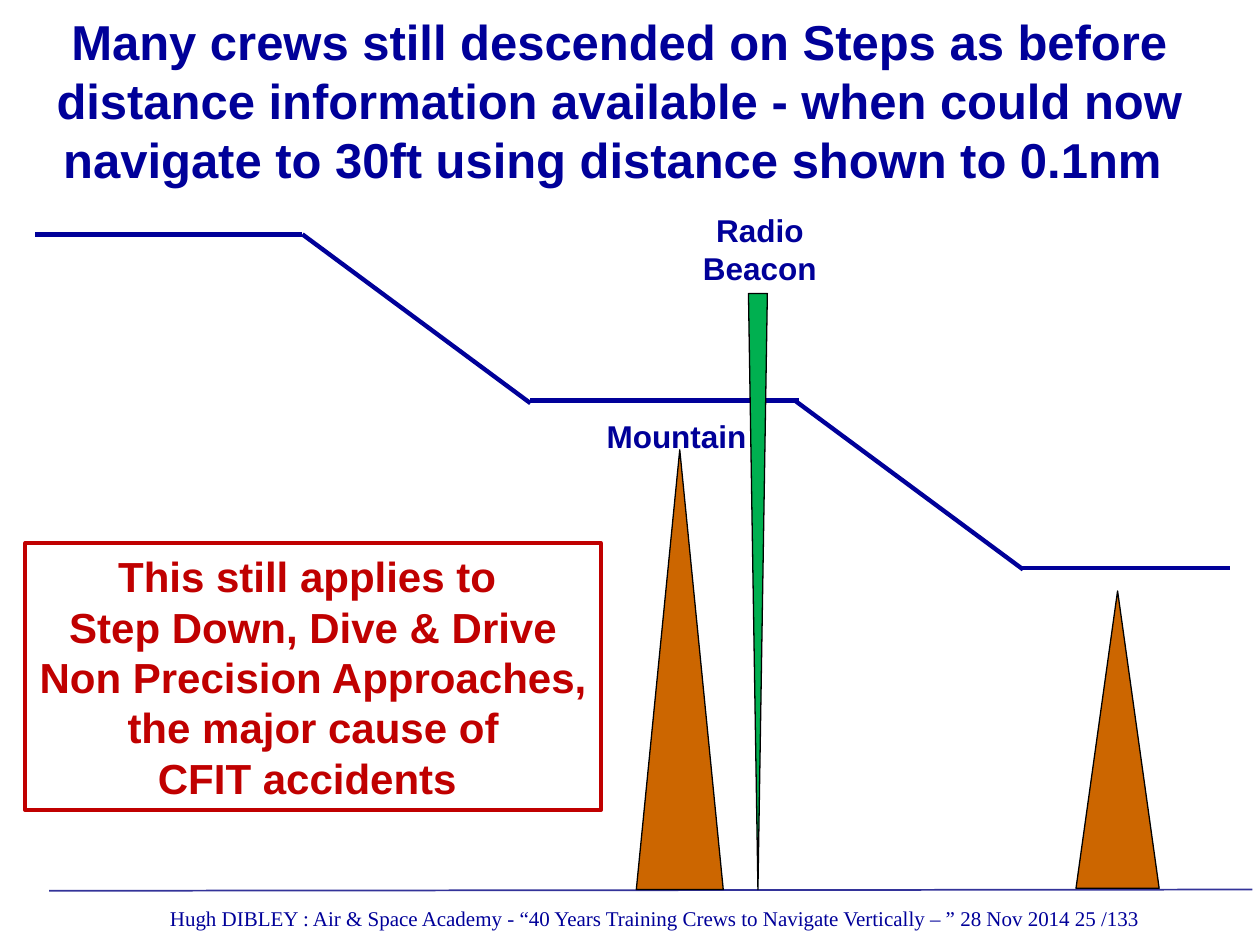
"""Build the slide on step-down descents over mountains and a radio beacon."""
from typing import NamedTuple

import pptx
import pptx.dml.color
import pptx.enum.shapes
import pptx.enum.text
import pptx.oxml
import pptx.oxml.ns
import pptx.util

Inches = pptx.util.Inches
RGBColor = pptx.dml.color.RGBColor

NAVY = RGBColor(0x00, 0x00, 0x99)
GROUND_BLUE = RGBColor(0x33, 0x33, 0x99)
BROWN = RGBColor(0xCC, 0x66, 0x00)
GREEN = RGBColor(0x00, 0xB0, 0x50)
RED = RGBColor(0xC0, 0x00, 0x00)
BLACK = RGBColor(0x00, 0x00, 0x00)


class Area(NamedTuple):
    left: float
    top: float
    width: float
    height: float

    def lengths(self) -> list:
        return [Inches(value) for value in self]


class Segment(NamedTuple):
    x1: float
    y1: float
    x2: float
    y2: float


class Peak(NamedTuple):
    area: Area
    fill: RGBColor
    rotation: float = 0


class Label(NamedTuple):
    area: Area
    text: str
    size: float = 18
    font: str = "Arial"
    bold: bool = True


GROUND = Segment(0.39, 7.07, 9.94, 7.06)
DESCENT = [
    Segment(0.28, 1.86, 2.4, 1.86),
    Segment(2.4, 1.86, 4.21, 3.2),
    Segment(4.21, 3.18, 6.34, 3.18),
    Segment(6.31, 3.18, 8.12, 4.52),
    Segment(8.1, 4.51, 9.76, 4.51),
]
PEAKS = [
    Peak(Area(5.05, 3.57, 0.69, 3.49), BROWN),
    Peak(Area(5.94, 2.33, 0.15, 4.73), GREEN, 180),
    Peak(Area(8.54, 4.69, 0.66, 2.36), BROWN),
]
LABELS = [
    Label(Area(5.44, 1.62, 1.18, 0.71), "Radio Beacon"),
    Label(Area(4.66, 3.26, 1.42, 0.4), "Mountain"),
    Label(
        Area(0.4, 7.14, 9.6, 0.3),
        "Hugh DIBLEY : Air & Space Academy - “40 Years Training Crews to "
        "Navigate Vertically – ” 28 Nov 2014 25 /133",
        12, "Times New Roman", False,
    ),
]
TITLE = (
    "Many crews still descended on Steps as before\n"
    "distance information available - when could now "
    "navigate to 30ft using distance shown to 0.1nm "
)
WARNING = (
    "This still applies to \nStep Down, Dive & Drive\n"
    "Non Precision Approaches,\nthe major cause of\nCFIT accidents "
)


def write_text(box, text: str, *, size: float, color: RGBColor = NAVY,
               font: str = "Arial", bold: bool = True) -> None:
    frame = box.text_frame
    frame.word_wrap = True
    frame.auto_size = pptx.enum.text.MSO_AUTO_SIZE.NONE
    frame.vertical_anchor = pptx.enum.text.MSO_ANCHOR.MIDDLE
    frame.text = text
    for para in frame.paragraphs:
        para.alignment = pptx.enum.text.PP_ALIGN.CENTER
        for span in para.runs:
            span.font.name = font
            span.font.size = pptx.util.Pt(size)
            span.font.bold = bold
            span.font.color.rgb = color


def draw_line(page, segment: Segment, color: RGBColor, width: float) -> None:
    line = page.shapes.add_connector(
        pptx.enum.shapes.MSO_CONNECTOR.STRAIGHT,
        *[Inches(value) for value in segment])
    line.line.color.rgb = color
    line.line.width = pptx.util.Pt(width)
    properties = line.element.find(pptx.oxml.ns.qn("p:spPr"))
    properties.append(pptx.oxml.parse_xml(
        f"<a:effectLst {pptx.oxml.ns.nsdecls('a')}/>"))


def draw_peak(page, peak: Peak) -> None:
    shape = page.shapes.add_shape(
        pptx.enum.shapes.MSO_SHAPE.ISOSCELES_TRIANGLE, *peak.area.lengths())
    shape.rotation = peak.rotation
    shape.shadow.inherit = False
    shape.fill.solid()
    shape.fill.fore_color.rgb = peak.fill
    shape.line.color.rgb = BLACK
    shape.line.width = pptx.util.Pt(0.75)


def draw_label(page, label: Label) -> None:
    box = page.shapes.add_textbox(*label.area.lengths())
    write_text(box, label.text, size=label.size, font=label.font,
               bold=label.bold)


def draw_warning(page) -> None:
    box = page.shapes.add_shape(
        pptx.enum.shapes.MSO_SHAPE.RECTANGLE,
        *Area(0.2, 4.31, 4.57, 2.12).lengths())
    box.shadow.inherit = False
    box.fill.background()
    box.line.color.rgb = RED
    box.line.width = pptx.util.Pt(2)
    write_text(box, WARNING, size=24, color=RED)


def main() -> None:
    deck = pptx.Presentation()
    deck.slide_width, deck.slide_height = Inches(10), Inches(7.5)
    page = deck.slides.add_slide(deck.slide_layouts.get_by_name("Title Only"))
    title = page.shapes.title
    title.left, title.top, title.width, title.height = Area(
        0.21, 0.04, 9.41, 1.51).lengths()
    write_text(title, TITLE, size=28)
    draw_line(page, GROUND, GROUND_BLUE, 1)
    for segment in DESCENT:
        draw_line(page, segment, NAVY, 2.5)
    for peak in PEAKS:
        draw_peak(page, peak)
    draw_warning(page)
    for label in LABELS:
        draw_label(page, label)
    deck.save("out.pptx")


if __name__ == "__main__":
    main()
